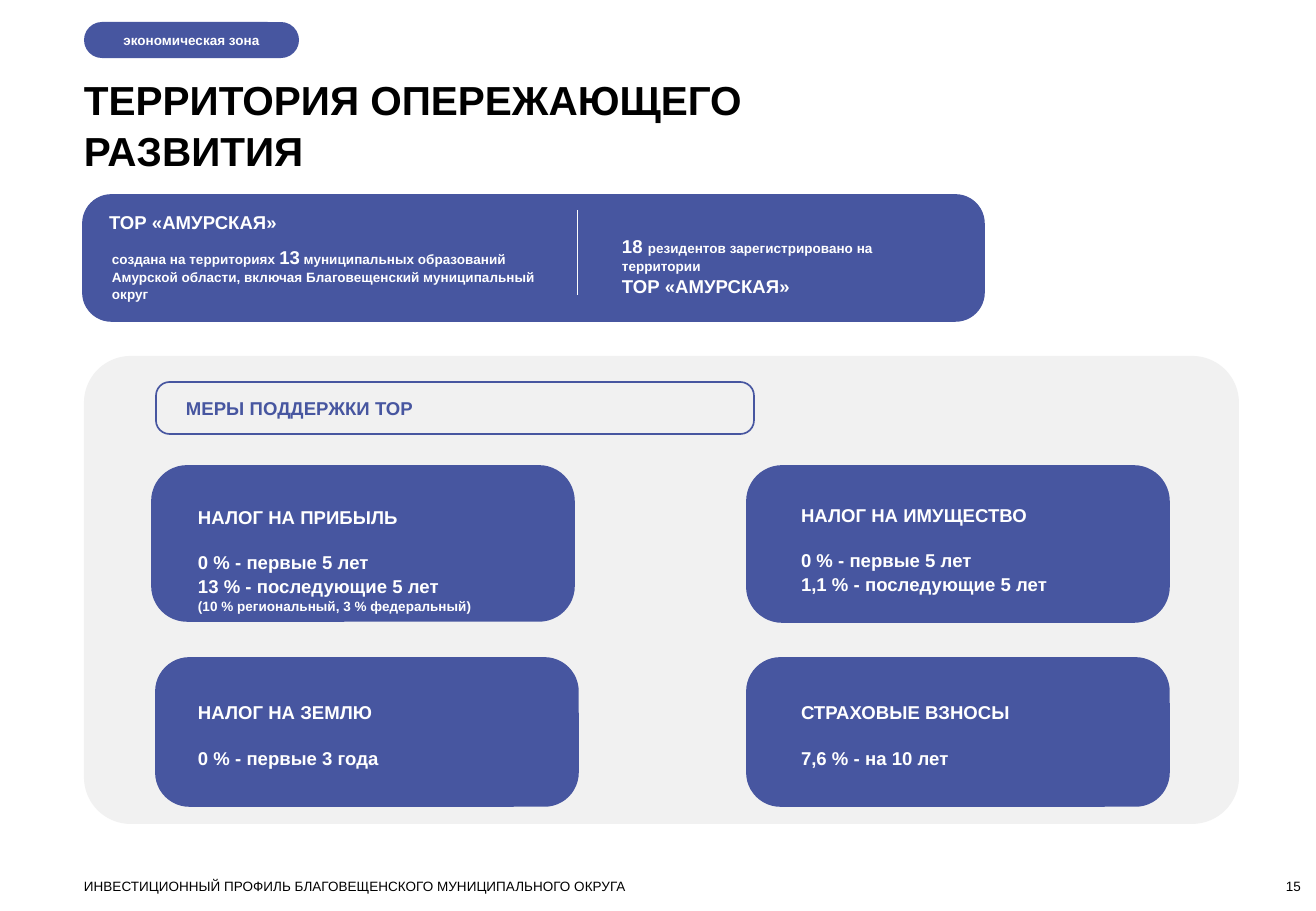
from pptx import Presentation
from pptx.dml.color import RGBColor
from pptx.enum.shapes import MSO_CONNECTOR, MSO_SHAPE
from pptx.enum.text import MSO_ANCHOR, PP_ALIGN
from pptx.oxml.ns import qn
from pptx.util import Pt
from lxml import etree

EMU_PER_PX = 914400 / 121.5
ROUNDED = MSO_SHAPE.ROUNDED_RECTANGLE
STRAIGHT = MSO_CONNECTOR.STRAIGHT
TOP, MIDDLE, BOTTOM = MSO_ANCHOR.TOP, MSO_ANCHOR.MIDDLE, MSO_ANCHOR.BOTTOM
LEFT, CENTER, RIGHT = PP_ALIGN.LEFT, PP_ALIGN.CENTER, PP_ALIGN.RIGHT

BLUE = RGBColor(0x47, 0x56, 0xA0)
GRAY = RGBColor(0xF1, 0xF1, 0xF1)
DIVIDER = RGBColor(0xFC, 0xFC, 0xFC)
WHITE = RGBColor(0xFF, 0xFF, 0xFF)
BLACK = RGBColor(0, 0, 0)

FONT = "Arial"
SMALL, NORMAL, LARGE = 8, 11, 24
CARD_ROUNDING = 0.226
CARD_GAP = 13


def px(*lengths):
    return [round(length * EMU_PER_PX) for length in lengths]


class SlideBuilder:
    def __init__(self, page):
        self.page = page

    def panel(self, area, rounding, fill=None, line=None):
        shape = self.page.shapes.add_shape(ROUNDED, *px(*area))
        shape.adjustments[0] = rounding
        shape.shadow.inherit = False
        if fill is None:
            shape.fill.background()
        else:
            shape.fill.solid()
            shape.fill.fore_color.rgb = fill
        if line is None:
            shape.line.fill.background()
        else:
            shape.line.color.rgb = line
            shape.line.width = Pt(1)
        return shape

    def label(self, shape, paragraphs, color=WHITE, bold=True, align=LEFT,
              anchor=TOP, spacing=1.05, indent=0, gap=0):
        """Each paragraph is a list of (text, size) runs; gap follows the first."""
        frame = shape.text_frame
        frame.word_wrap = True
        frame.vertical_anchor = anchor
        frame.margin_left = px(indent)[0]
        frame.margin_top = frame.margin_right = frame.margin_bottom = 0
        for index, runs in enumerate(paragraphs):
            para = frame.add_paragraph() if index else frame.paragraphs[0]
            para.alignment = align
            para.line_spacing = spacing
            if index == 1 and gap:
                para.space_before = Pt(gap)
            for text, size in runs:
                span = para.add_run()
                span.text = text
                span.font.name = FONT
                span.font.size = Pt(size)
                span.font.bold = bold
                span.font.color.rgb = color

    def text(self, area, paragraphs, **style):
        box = self.page.shapes.add_textbox(*px(*area))
        self.label(box, paragraphs, **style)

    def line(self, ends, color, width):
        connector = self.page.shapes.add_connector(STRAIGHT, *px(*ends))
        connector.line.color.rgb = color
        connector.line.width = Pt(width)
        properties = connector._element.spPr
        etree.SubElement(properties, qn("a:effectLst"))


def main():
    deck = Presentation()
    deck.slide_width, deck.slide_height = px(1316, 911)
    builder = SlideBuilder(deck.slides.add_slide(deck.slide_layouts[6]))

    # Heading
    builder.text((84, 73, 787, 98), [[("ТЕРРИТОРИЯ ОПЕРЕЖАЮЩЕГО РАЗВИТИЯ", LARGE)]],
                 color=BLACK)
    tag = builder.panel((84, 22, 215, 36), 0.5, BLUE)
    builder.label(tag, [[("экономическая зона", SMALL)]],
                  align=CENTER, anchor=MIDDLE, spacing=1)

    # Summary of the territory
    builder.panel((83, 195, 901, 126), CARD_ROUNDING, BLUE, BLUE)
    builder.text((109, 210, 304, 23), [[("ТОР «АМУРСКАЯ»", NORMAL)]])
    builder.text((112, 245, 428, 55), [[
        ("создана на территориях ", SMALL),
        ("13", NORMAL),
        (" муниципальных образований Амурской области, включая "
         "Благовещенский муниципальный округ", SMALL),
    ]])
    builder.text((622, 234, 300, 61), [
        [("18 ", NORMAL), ("резидентов зарегистрировано на территории", SMALL)],
        [("ТОР «АМУРСКАЯ»", NORMAL)],
    ])
    builder.line((577, 210, 577, 295), DIVIDER, 0.5)

    # Support measures
    builder.panel((84, 356, 1155, 468), 0.1, GRAY)
    measures = builder.panel((156, 382, 598, 52), 0.262, line=BLUE)
    builder.label(measures, [[("МЕРЫ ПОДДЕРЖКИ ТОР", NORMAL)]],
                  color=BLUE, anchor=MIDDLE, spacing=1, indent=26)

    # Tax cards: card area, text corner, heading, terms
    cards = [
        ((152, 466, 422, 155), (198, 505), "НАЛОГ НА ПРИБЫЛЬ",
         [("0 % - первые 5 лет", NORMAL), ("13 % - последующие 5 лет", NORMAL),
          ("(10 % региональный, 3 % федеральный)", SMALL)]),
        ((747, 466, 422, 156), (801, 503), "НАЛОГ НА ИМУЩЕСТВО",
         [("0 % - первые 5 лет", NORMAL), ("1,1 % - последующие 5 лет", NORMAL)]),
        ((156, 658, 422, 148), (198, 700), "НАЛОГ НА ЗЕМЛЮ",
         [("0 % - первые 3 года", NORMAL)]),
        ((747, 658, 422, 148), (801, 700), "СТРАХОВЫЕ ВЗНОСЫ",
         [("7,6 % - на 10 лет", NORMAL)]),
    ]
    for area, corner, heading, terms in cards:
        builder.panel(area, CARD_ROUNDING, BLUE, BLUE)
        builder.text((*corner, 304, 107), [[(heading, NORMAL)], *([term] for term in terms)],
                     gap=CARD_GAP)

    # Footer
    builder.text((84, 878, 972, 16),
                 [[("ИНВЕСТИЦИОННЫЙ ПРОФИЛЬ БЛАГОВЕЩЕНСКОГО МУНИЦИПАЛЬНОГО ОКРУГА", SMALL)]],
                 color=BLACK, bold=False, spacing=1)
    builder.text((1204, 878, 97, 16), [[("15", SMALL)]],
                 color=BLACK, bold=False, align=RIGHT, anchor=BOTTOM, spacing=1)

    deck.save("out.pptx")


if __name__ == "__main__":
    main()
